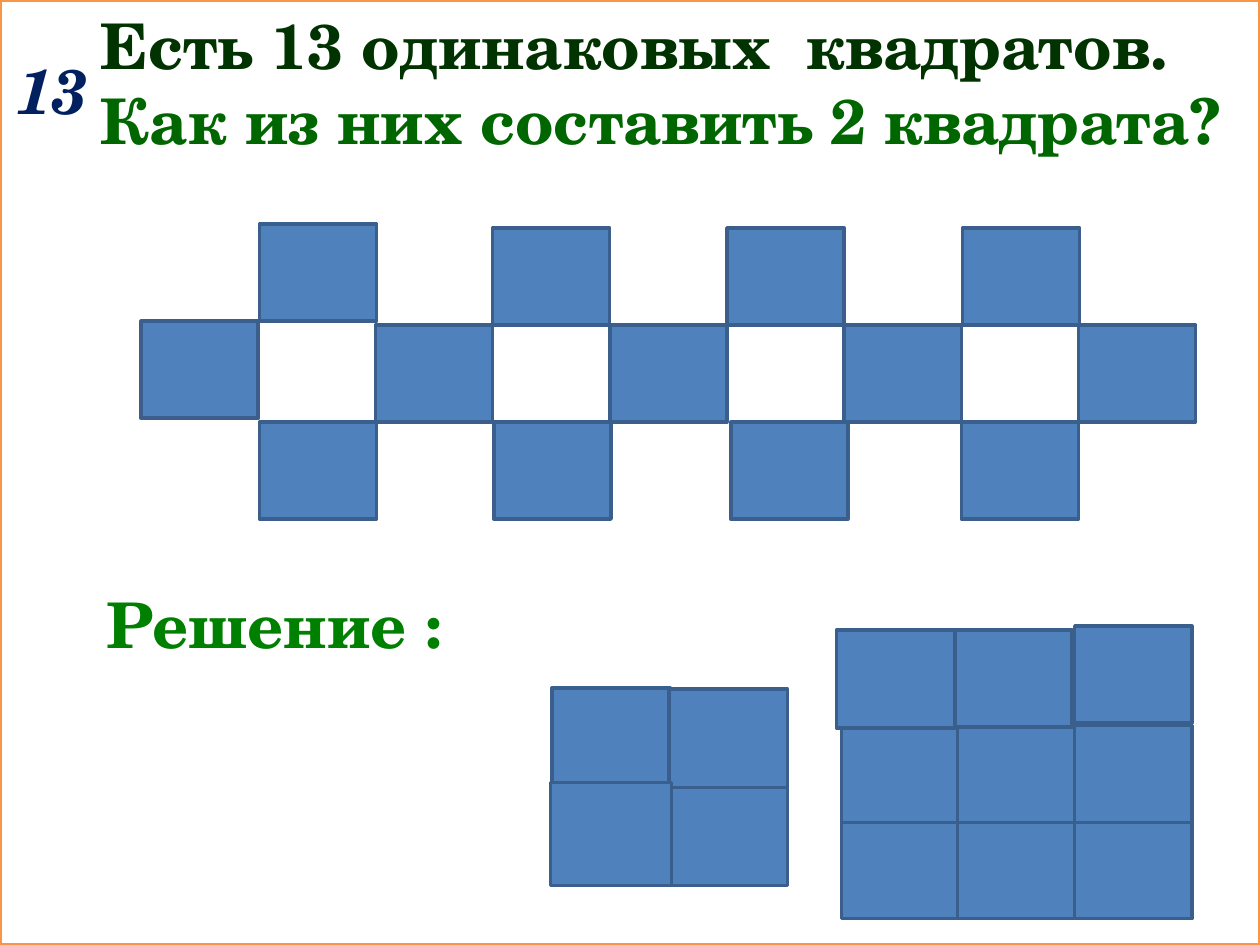
from pptx import Presentation
from pptx.dml.color import RGBColor
from pptx.enum import shapes, text
from pptx.util import Inches, Pt

FONT = "TeX Gyre Schola"
SIDE_X, SIDE_Y = 0.93, 0.77
STEP = 2 * SIDE_X


def color(value):
    return RGBColor.from_string(value)


def add_rect(page, left, top, width=SIDE_X, height=SIDE_Y,
             fill="4F81BD", line="3A5F8C"):
    rect = page.shapes.add_shape(shapes.MSO_SHAPE.RECTANGLE, Inches(left),
                                 Inches(top), Inches(width), Inches(height))
    rect.shadow.inherit = False
    rect.fill.solid()
    rect.fill.fore_color.rgb = color(fill)
    rect.line.color.rgb = color(line)
    rect.line.width = Pt(2)


def add_label(page, left, top, width, height, parts, italic=False):
    """Add a text box whose parts are (wording, colour) pairs."""
    box = page.shapes.add_textbox(Inches(left), Inches(top),
                                  Inches(width), Inches(height))
    frame = box.text_frame
    frame.word_wrap = True
    frame.auto_size = text.MSO_AUTO_SIZE.SHAPE_TO_FIT_TEXT
    for wording, value in parts:
        span = frame.paragraphs[0].add_run()
        span.text = wording
        span.font.name = FONT
        span.font.size = Pt(36)
        span.font.bold = True
        span.font.italic = italic
        span.font.color.rgb = color(value)


def add_chain(page):
    """Thirteen squares joined at their corners."""
    for left, top in zip((2.06, 3.91, 5.77, 7.64), (1.78, 1.81, 1.81, 1.81)):
        add_rect(page, left, top)
    for column in range(5):
        add_rect(page, 1.12 + column * STEP, 2.58 if column else 2.55)
    for left in (2.06, 3.92, 5.8, 7.63):
        add_rect(page, left, 3.35)


def add_small_square(page):
    """Four squares, two by two."""
    for left, top, width, height in ((4.38, 5.46, 0.94, 0.86),
                                     (5.31, 5.47, 0.94, 0.86),
                                     (5.31, 6.25, 0.94, 0.78),
                                     (4.37, 6.21, 0.96, 0.82)):
        add_rect(page, left, top, width, height)


def add_large_square(page):
    """Nine squares, three by three."""
    for top in (6.52, 5.76):
        for left in (6.68, 7.6, 8.53):
            add_rect(page, left, top)
    add_rect(page, 7.58, 5)
    add_rect(page, 8.53, 4.97)
    add_rect(page, 6.64, 5, 0.94, 0.78)


def main():
    deck = Presentation()
    deck.slide_width, deck.slide_height = Inches(10), Inches(7.5)
    page = deck.slides.add_slide(deck.slide_layouts[6])

    # Frame around the page
    add_rect(page, 0, 0, 10, 7.5, "FFFFFF", "F79646")

    # Number, question and answer heading
    add_label(page, 0.03, 0.36, 1.86, 0.71, [("13", "002060")], italic=True)
    add_label(page, 0.7, 0, 9.3, 1.31,
              [("Есть 13 одинаковых  квадратов. ", "003300"),
               ("Как из них составить 2 квадрата?", "006600")])
    add_label(page, 0.75, 4.6, 9.13, 0.71, [("Решение :", "008000")])

    # Puzzle and solution
    add_chain(page)
    add_small_square(page)
    add_large_square(page)

    deck.save("out.pptx")


if __name__ == "__main__":
    main()
